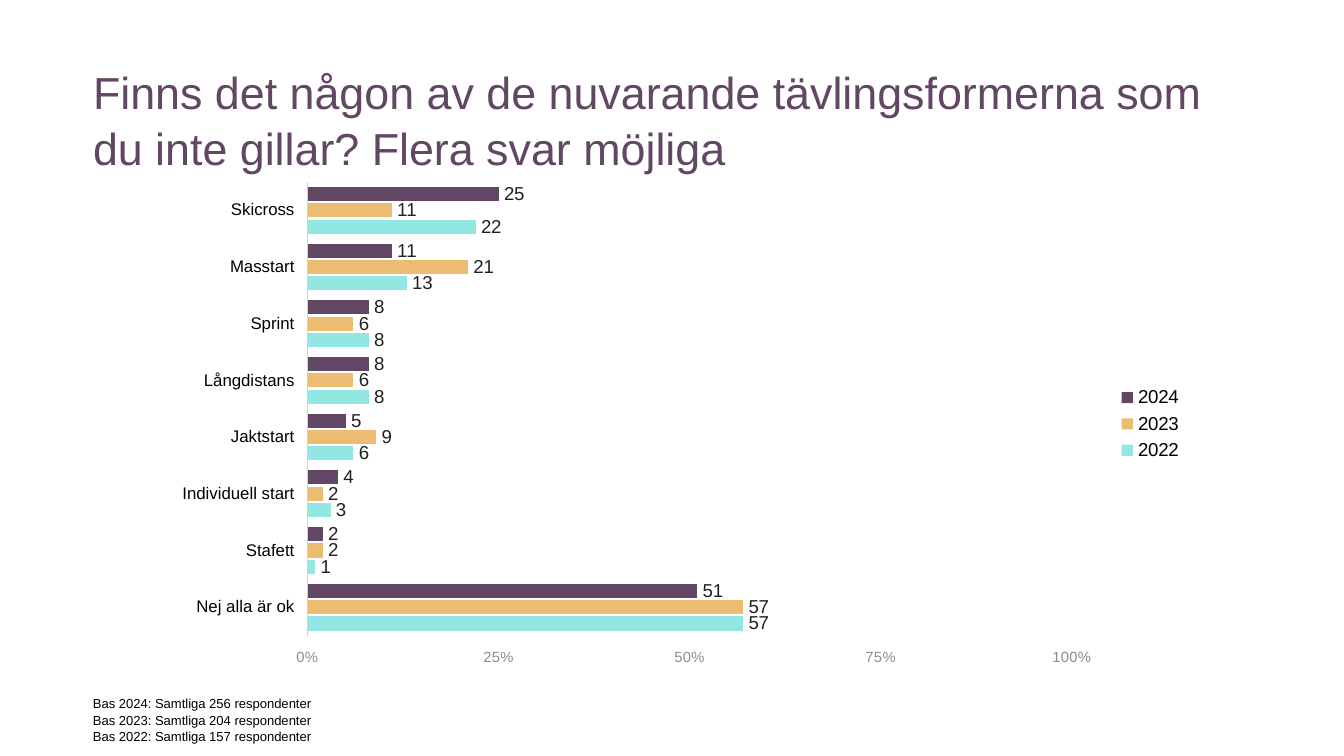
from pptx import Presentation
from pptx import util as u
from pptx.chart.data import CategoryChartData
from pptx.dml.color import RGBColor
from pptx.enum import chart as charts, text
from pptx.oxml import parse_xml
from pptx.oxml.ns import nsdecls

PX = 914400 / 134.4
PLUM = RGBColor(0x62, 0x47, 0x64)
AMBER = RGBColor(0xEB, 0xBC, 0x71)
AQUA = RGBColor(0x92, 0xE7, 0xE2)
BLACK = RGBColor(0, 0, 0)
INK = RGBColor(0x21, 0x21, 0x21)
GREY = RGBColor(0x8C, 0x8C, 0x8C)
LINE = RGBColor(0xD1, 0xD1, 0xD1)


def px(*lengths):
    return [u.Emu(round(length * PX)) for length in lengths]


def write(shape, content, box, size, color, spacing=1.05):
    shape.left, shape.top, shape.width, shape.height = px(*box)
    frame = shape.text_frame
    frame.margin_left = frame.margin_top = frame.margin_right = frame.margin_bottom = 0
    frame.word_wrap = True
    frame.auto_size = text.MSO_AUTO_SIZE.NONE
    frame.vertical_anchor = text.MSO_ANCHOR.TOP
    frame.text = content
    for paragraph in frame.paragraphs:
        paragraph.alignment = text.PP_ALIGN.LEFT
        paragraph.line_spacing = spacing
        paragraph.font.name = "Arial"
        paragraph.font.size = u.Pt(size)
        paragraph.font.color.rgb = color


presentation = Presentation()
presentation.slide_width, presentation.slide_height = px(1344, 756)
slide = presentation.slides.add_slide(presentation.slide_layouts[5])

write(slide.shapes.title,
      "Finns det någon av de nuvarande tävlingsformerna som du inte gillar? Flera svar möjliga",
      (93, 62, 1153, 110), size=24, color=PLUM)

data = CategoryChartData(number_format="0")
data.categories = ["Nej alla är ok", "Stafett", "Individuell start", "Jaktstart",
                   "Långdistans", "Sprint", "Masstart", "Skicross"]
data.add_series("2022", [57, 1, 3, 6, 8, 8, 13, 22])
data.add_series("2023", [57, 2, 2, 9, 6, 6, 21, 11])
data.add_series("2024", [51, 2, 4, 5, 8, 8, 11, 25])
chart = slide.shapes.add_chart(
    charts.XL_CHART_TYPE.BAR_CLUSTERED, *px(163, 172, 1033, 504), data).chart
chart.has_title = False
chart.has_legend = True
chart.legend.position = charts.XL_LEGEND_POSITION.RIGHT
chart.legend.include_in_layout = False

plot = chart.plots[0]
plot.gap_width = 70
plot.overlap = -16
plot.vary_by_categories = False
for series, color in zip(plot.series, (AQUA, AMBER, PLUM)):
    series.format.fill.solid()
    series.format.fill.fore_color.rgb = color
    series.invert_if_negative = False
plot.has_data_labels = True
labels = plot.data_labels
labels.show_value = True
labels.position = charts.XL_LABEL_POSITION.OUTSIDE_END
labels.number_format = "0"
labels.number_format_is_linked = False

category_axis, value_axis = chart.category_axis, chart.value_axis
for axis in (category_axis, value_axis):
    axis.has_major_gridlines = False
    axis.major_tick_mark = axis.minor_tick_mark = charts.XL_TICK_MARK.NONE
    axis.tick_label_position = charts.XL_TICK_LABEL_POSITION.LOW
category_axis.format.line.color.rgb = LINE
category_axis.format.line.width = u.Pt(0.75)
value_axis.format.line.fill.background()
value_axis.minimum_scale, value_axis.maximum_scale, value_axis.major_unit = 0, 100, 25
value_axis.tick_labels.number_format = r"General\%"
value_axis.tick_labels.number_format_is_linked = False

for font, size, color in (
    (chart.font, 10, INK),
    (labels.font, 10, INK),
    (chart.legend.font, 10, BLACK),
    (category_axis.tick_labels.font, 9, BLACK),
    (value_axis.tick_labels.font, 7.9, GREY),
):
    font.name, font.size, font.color.rgb = "Arial", u.Pt(size), color

plot_area = chart._chartSpace.chart.plotArea
for layout in plot_area.findall("{*}layout"):
    plot_area.remove(layout)
plot_area.insert(0, parse_xml(
    f'<c:layout {nsdecls("c")}><c:manualLayout><c:layoutTarget val="inner"/>'
    '<c:xMode val="edge"/><c:yMode val="edge"/><c:x val="0.14"/><c:y val="0.02"/>'
    '<c:w val="0.74"/><c:h val="0.9"/></c:manualLayout></c:layout>'))

bases = {2024: 256, 2023: 204, 2022: 157}
write(slide.shapes.add_textbox(0, 0, 0, 0),
      "\n".join(f"Bas {year}: Samtliga {count} respondenter" for year, count in bases.items()),
      (93, 695, 242, 42), size=7, color=BLACK)

presentation.save("out.pptx")
